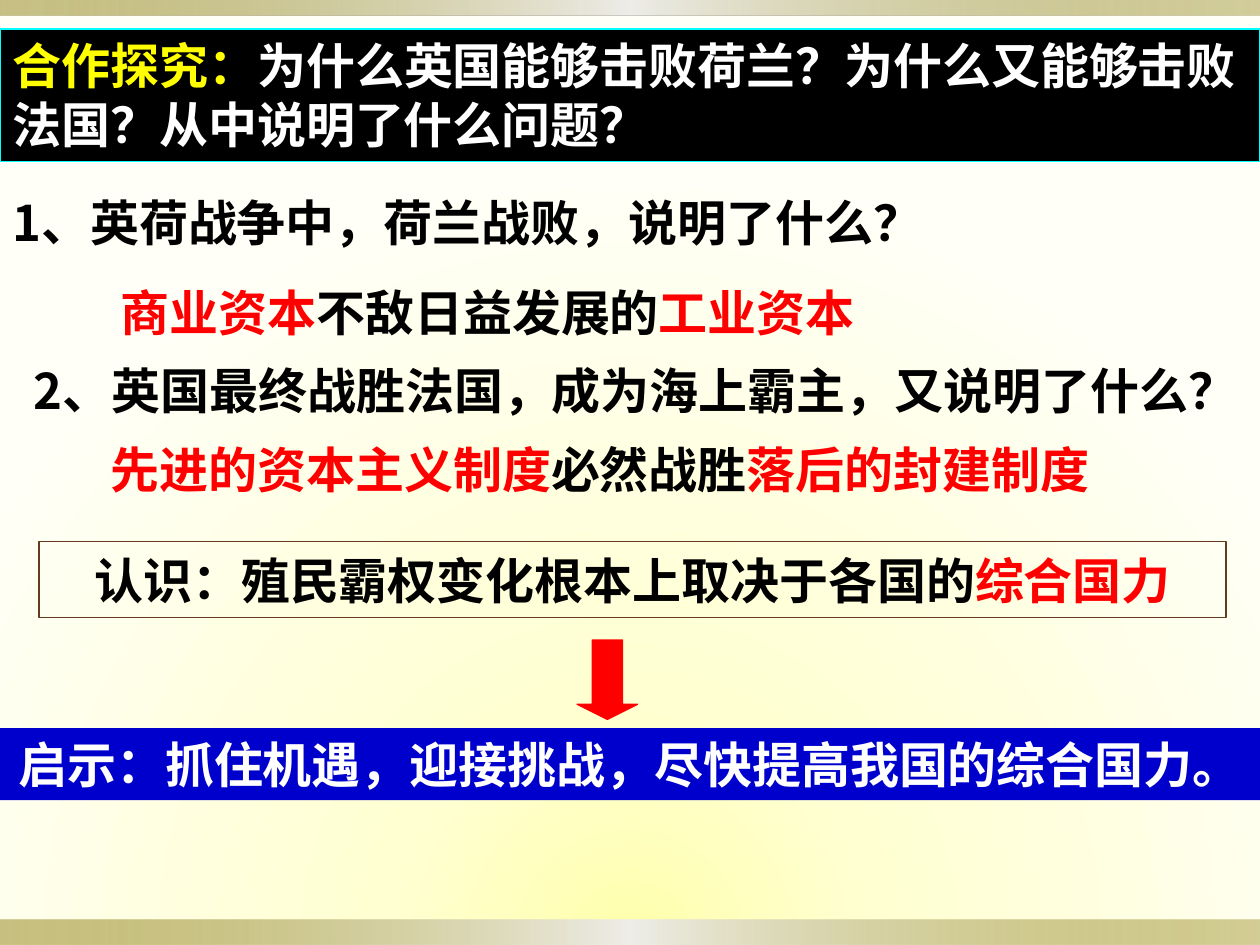
from lxml import etree
from pptx import Presentation
from pptx.dml.color import RGBColor
from pptx.enum.shapes import MSO_SHAPE as Shape
from pptx.enum.text import MSO_ANCHOR as Anchor, MSO_AUTO_SIZE as AutoSize, PP_ALIGN as Align
from pptx.oxml import parse_xml
from pptx.oxml.ns import nsdecls, qn
from pptx.util import Inches, Pt

WIDTH, HEIGHT = 10, 7.5
BODY_FONT = "Noto Sans CJK SC"
BLACK, WHITE, RED, YELLOW, BLUE = "000000", "FFFFFF", "FF0000", "FFFF00", "0000CC"
BAR_STOPS = [(0, "918415", 50), (50, "EEEDE8", 100), (100, "918415", 40)]
PAGE_STOPS = [(0, "FFFFAC", 100), (31, "FFFFD2", 100), (100, "FFFFF7", 100)]
LINEAR = '<a:lin ang="0" scaled="0"/>'
RADIAL = '<a:path path="circle"><a:fillToRect l="50000" t="150000" r="50000" b="0"/></a:path>'


def color(value):
    return RGBColor.from_string(value)


def gradient(stops, direction):
    marks = "".join(
        f'<a:gs pos="{place * 1000}"><a:srgbClr val="{value}">'
        f'<a:alpha val="{opacity * 1000}"/></a:srgbClr></a:gs>'
        for place, value, opacity in stops
    )
    return parse_xml(
        f'<a:gradFill {nsdecls("a")} rotWithShape="1"><a:gsLst>{marks}</a:gsLst>{direction}</a:gradFill>'
    )


def paint_background(page):
    page.background.fill.solid()
    properties = page.element.cSld.find(qn("p:bg")).find(qn("p:bgPr"))
    properties.replace(properties[0], gradient(PAGE_STOPS, RADIAL))


def place(box, left, top, width, height):
    box.left, box.top = Inches(left), Inches(top)
    box.width, box.height = Inches(width), Inches(height)


def style(box, fill=None, line=None):
    if fill:
        box.fill.solid()
        box.fill.fore_color.rgb = color(fill)
    else:
        box.fill.background()
    if line:
        box.line.color.rgb = color(line)
        box.line.width = Pt(0.75)
    else:
        box.line.fill.background()


def add_shape(page, kind, area, fill=None, line=None):
    box = page.shapes.add_shape(kind, *map(Inches, area))
    box.shadow.inherit = False
    style(box, fill, line)
    return box


def add_bar(page, top, height):
    bar = add_shape(page, Shape.RECTANGLE, (0, top, WIDTH, height))
    properties = bar.element.spPr
    properties.replace(properties.find(qn("a:noFill")), gradient(BAR_STOPS, LINEAR))


def write(box, runs, font=BODY_FONT, align=Align.LEFT, anchor=Anchor.TOP):
    frame = box.text_frame
    frame.word_wrap = True
    frame.auto_size = AutoSize.NONE
    frame.vertical_anchor = anchor
    para = frame.paragraphs[0]
    para.alignment = align
    for text, value in runs:
        span = para.add_run()
        span.text = text
        span.font.name = font
        span.font.size = Pt(28)
        span.font.bold = True
        span.font.color.rgb = color(value)


def add_line(page, left, top, width, runs):
    write(page.shapes.add_textbox(*map(Inches, (left, top, width, 0.57))), runs)


def add_heading(page):
    heading = page.shapes.title
    place(heading, 0, 0.23, WIDTH, 1.05)
    style(heading, BLACK, "00FFFF")
    write(heading, [
        ("合作探究：", YELLOW),
        ("为什么英国能够击败荷兰？为什么又能够击败法国？从中说明了什么问题？", WHITE),
    ], "Cabin")


def main():
    deck = Presentation()
    deck.slide_width, deck.slide_height = Inches(WIDTH), Inches(HEIGHT)
    page = deck.slides.add_slide(deck.slide_layouts[5])
    paint_background(page)
    add_bar(page, 7.3, 0.2)
    add_bar(page, 0, 0.12)
    add_heading(page)

    add_line(page, 0, 1.48, WIDTH, [("1、英荷战争中，荷兰战败，说明了什么？", BLACK)])
    add_line(page, 0.86, 2.19, 6.8, [
        ("商业资本", RED), ("不敌日益发展的", BLACK), ("工业资本", RED),
    ])
    add_line(page, 0.17, 2.81, 9.83, [("2、英国最终战胜法国，成为海上霸主，又说明了什么？", BLACK)])
    add_line(page, 0.78, 3.44, 8.91, [
        ("先进的资本主义制度", RED), ("必然战胜", BLACK), ("落后的封建制度", RED),
    ])

    insight = add_shape(page, Shape.RECTANGLE, (0.31, 4.3, 9.42, 0.6), line="653A20")
    write(insight, [
        ("认识：殖民霸权变化根本上取决于各国的", BLACK), ("综合国力", RED),
    ], align=Align.CENTER, anchor=Anchor.MIDDLE)

    arrow = add_shape(page, Shape.DOWN_ARROW, (4.58, 5.08, 0.48, 0.63), RED, RED)
    arrow.adjustments[0], arrow.adjustments[1] = 0.5, 0.25

    lesson = add_shape(page, Shape.RECTANGLE, (0, 5.78, WIDTH, 0.57), BLUE)
    write(lesson, [("启示：抓住机遇，迎接挑战，尽快提高我国的综合国力。", WHITE)],
          "Karla", Align.CENTER)
    deck.save("out.pptx")


if __name__ == "__main__":
    main()
